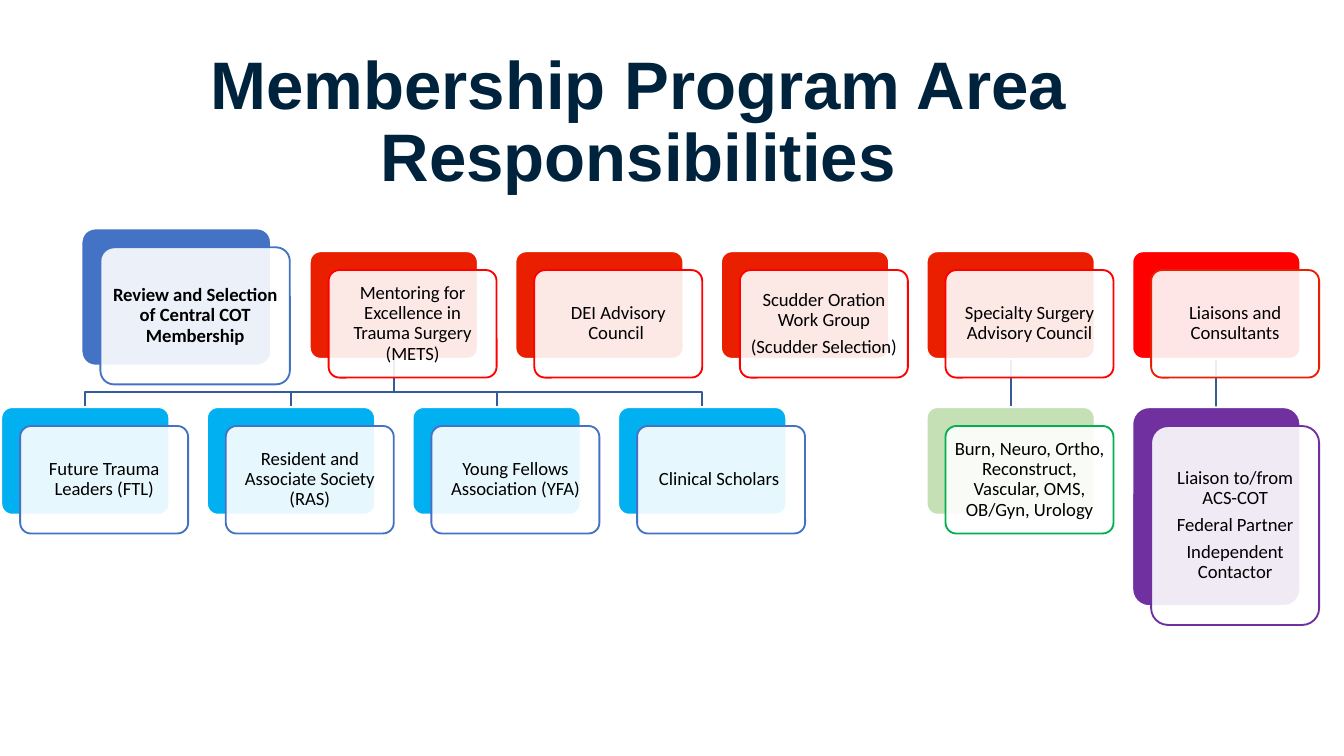
from dataclasses import dataclass

import pptx
import pptx.dml.color
import pptx.enum.shapes
import pptx.enum.text
import pptx.oxml.ns
import pptx.util
from lxml import etree

Inches = pptx.util.Inches
Pt = pptx.util.Pt

# Widescreen page
PAGE_WIDTH = Inches(10)
PAGE_HEIGHT = PAGE_WIDTH * 9 // 16

# Grid: columns may be fractional, rows are "top" and "bottom"
LEFT, PITCH = 0.01, 1.53
TOP_ROW, BOTTOM_ROW = 1.87, 3.03
CARD_WIDTH, CARD_HEIGHT = 1.25, 0.8
OFFSET = 0.14
BEND = 2.92

BLUE, RED, BRIGHT_RED, CYAN = "4472C4", "E91F00", "FF0000", "00B0F0"
PURPLE, LIGHT_GREEN, GREEN = "7030A0", "C5E0B4", "00B050"
WHITE, BLACK, NAVY, LINK_BLUE = "FFFFFF", "000000", "00233D", "365B9D"


@dataclass
class Card:
    text: str
    column: float
    top: float
    back: str
    outline: str
    width: float = CARD_WIDTH
    height: float = CARD_HEIGHT
    bold: bool = False

    @property
    def left(self) -> float:
        return LEFT + self.column * PITCH

    @property
    def center(self) -> float:
        return self.left + self.width / 2

    @property
    def bottom(self) -> float:
        return self.top + self.height


REVIEW = Card("Review and Selection of Central COT Membership", 0.39, 1.7,
              BLUE, BLUE, 1.41, 1.02, True)
MENTORING = Card("Mentoring for Excellence in Trauma Surgery (METS)", 1.5,
                 TOP_ROW, RED, BRIGHT_RED)
PROGRAMS = [
    Card(text, column, BOTTOM_ROW, CYAN, BLUE)
    for column, text in enumerate([
        "Future Trauma Leaders (FTL)",
        "Resident and Associate Society (RAS)",
        "Young Fellows Association (YFA)",
        "Clinical Scholars ",
    ])
]
COUNCIL = Card("DEI Advisory Council ", 2.5, TOP_ROW, RED, BRIGHT_RED)
ORATION = Card("Scudder Oration Work Group\n(Scudder Selection)", 3.5,
               TOP_ROW, RED, BRIGHT_RED)
SPECIALTY = Card("Specialty Surgery Advisory Council", 4.5, TOP_ROW, RED, BRIGHT_RED)
SPECIALTIES = Card("Burn, Neuro, Ortho, Reconstruct, Vascular, OMS, OB/Gyn, Urology",
                   4.5, BOTTOM_ROW, LIGHT_GREEN, GREEN)
LIAISONS = Card("Liaisons and Consultants", 5.5, TOP_ROW, BRIGHT_RED, RED)
PARTNERS = Card("Liaison to/from ACS-COT\nFederal Partner\nIndependent Contactor",
                5.5, BOTTOM_ROW, PURPLE, PURPLE, height=1.48)

CARDS = [REVIEW, MENTORING, *PROGRAMS, COUNCIL, ORATION, SPECIALTY,
         SPECIALTIES, LIAISONS, PARTNERS]
LINKS = [(LIAISONS, PARTNERS), (SPECIALTY, SPECIALTIES),
         *((MENTORING, program) for program in reversed(PROGRAMS))]


def color(value: str) -> pptx.dml.color.RGBColor:
    return pptx.dml.color.RGBColor.from_string(value)


def format_text(frame, size: float, font: str, ink: str, bold: bool) -> None:
    frame.word_wrap = True
    frame.auto_size = pptx.enum.text.MSO_AUTO_SIZE.NONE
    for para in frame.paragraphs:
        para.alignment = pptx.enum.text.PP_ALIGN.CENTER
        para.line_spacing = 0.9
        for span in para.runs:
            span.font.size = Pt(size)
            span.font.name = font
            span.font.bold = bold
            span.font.color.rgb = color(ink)


def draw_title(page, text: str) -> None:
    title = page.shapes.title
    title.left, title.top = Inches(0.25), Inches(0.33)
    title.width, title.height = Inches(9), Inches(0.68)
    title.text_frame.text = text
    title.text_frame.vertical_anchor = pptx.enum.text.MSO_ANCHOR.TOP
    format_text(title.text_frame, 36, "Arial", NAVY, True)


def draw_link(page, parent: Card, child: Card) -> None:
    if parent.column == child.column:
        link = page.shapes.add_connector(
            pptx.enum.shapes.MSO_CONNECTOR.STRAIGHT,
            Inches(parent.center), Inches(parent.bottom),
            Inches(child.center), Inches(child.top))
        etree.SubElement(link._element.spPr, pptx.oxml.ns.qn("a:effectLst"))
    else:
        points = [(parent.center, BEND), (child.center, BEND), (child.center, child.top)]
        outline = page.shapes.build_freeform(
            Inches(parent.center), Inches(parent.bottom))
        outline.add_line_segments(
            [(Inches(x), Inches(y)) for x, y in points], close=False)
        link = outline.convert_to_shape()
        link.shadow.inherit = False
        link.fill.background()
    link.line.color.rgb = color(LINK_BLUE)
    link.line.width = Pt(1)


def draw_panel(page, card: Card, offset: float, fill: str, outline: str):
    panel = page.shapes.add_shape(
        pptx.enum.shapes.MSO_SHAPE.ROUNDED_RECTANGLE,
        Inches(card.left + offset), Inches(card.top + offset),
        Inches(card.width), Inches(card.height))
    panel.adjustments[0] = 0.1
    panel.shadow.inherit = False
    panel.fill.solid()
    panel.fill.fore_color.rgb = color(fill)
    panel.line.color.rgb = color(outline)
    panel.line.width = Pt(1)
    return panel


def draw_card(page, card: Card) -> None:
    draw_panel(page, card, 0, card.back, WHITE)
    front = draw_panel(page, card, OFFSET, WHITE, card.outline)

    # Let the back panel show faintly through the front one
    fill_color = front._element.spPr.find(
        pptx.oxml.ns.qn("a:solidFill") + "/" + pptx.oxml.ns.qn("a:srgbClr"))
    etree.SubElement(fill_color, pptx.oxml.ns.qn("a:alpha"), val="90000")

    frame = front.text_frame
    frame.text = card.text
    frame.vertical_anchor = pptx.enum.text.MSO_ANCHOR.MIDDLE
    frame.margin_left = frame.margin_right = Inches(0.04)
    frame.margin_top = frame.margin_bottom = Inches(0.04)
    format_text(frame, 10, "Calibri", BLACK, card.bold)
    for para in frame.paragraphs:
        para.space_after = Pt(3.5)


def main() -> None:
    deck = pptx.Presentation()
    deck.slide_width, deck.slide_height = PAGE_WIDTH, PAGE_HEIGHT
    page = deck.slides.add_slide(deck.slide_layouts.get_by_name("Title Only"))

    draw_title(page, "Membership Program Area Responsibilities")
    # Links lie behind the cards
    for parent, child in LINKS:
        draw_link(page, parent, child)
    for card in CARDS:
        draw_card(page, card)

    deck.save("out.pptx")


if __name__ == "__main__":
    main()
